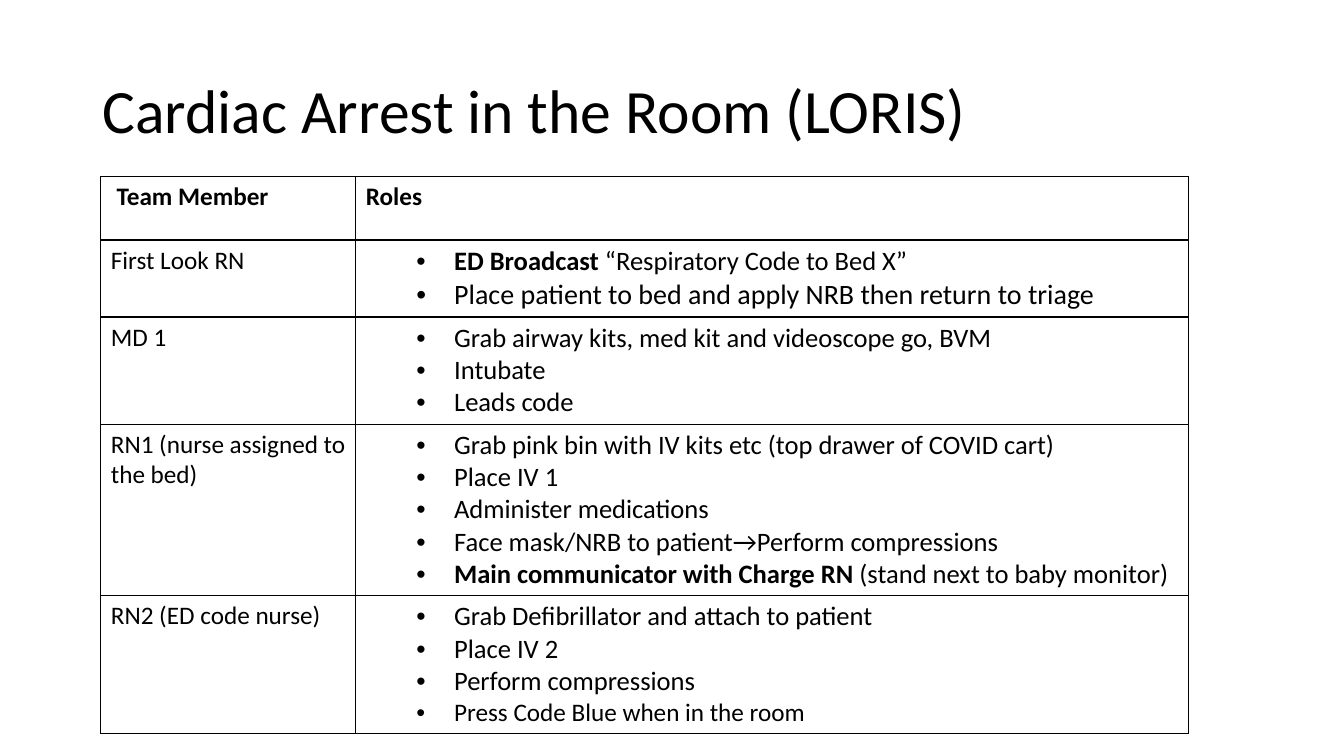
from lxml import etree
from pptx import Presentation
from pptx.dml.color import RGBColor
from pptx.enum.text import MSO_ANCHOR, PP_ALIGN
from pptx.oxml.ns import qn
from pptx.util import Pt

MIDDLE = MSO_ANCHOR.MIDDLE
LEFT = PP_ALIGN.LEFT
TITLE_ONLY = 5

FONT = "Calibri"
BLACK = "000000"
COLUMN_WIDTHS = (182.2, 594.7)
ROW_HEIGHTS = (45.5, 55, 76.5, 122, 98.5)

# Each role is (bold lead, plain text, size).
TEAM = [
    ("First Look RN", [
        ("ED Broadcast", " “Respiratory Code to Bed X”", 19),
        ("", "Place patient to bed and apply NRB then return to triage", 20),
    ]),
    ("MD 1", [
        ("", "Grab airway kits, med kit and videoscope go, BVM", 19),
        ("", "Intubate", 19),
        ("", "Leads code", 19),
    ]),
    ("RN1 (nurse assigned to the bed)", [
        ("", "Grab pink bin with IV kits etc (top drawer of COVID cart)", 19),
        ("", "Place IV 1", 19),
        ("", "Administer medications", 19),
        ("", "Face mask/NRB to patient→Perform compressions", 19),
        ("Main communicator with Charge RN ", "(stand next to baby monitor)", 19),
    ]),
    ("RN2 (ED code nurse)", [
        ("", "Grab Defibrillator and attach to patient", 19),
        ("", "Place IV 2", 19),
        ("", "Perform compressions", 19),
        ("", "Press Code Blue when in the room", 18),
    ]),
]


def rgb(color):
    return RGBColor.from_string(color)


def add_run(p, text, size, bold=False):
    r = p.add_run()
    r.text = text
    r.font.name = FONT
    r.font.size = Pt(size)
    r.font.bold = bold
    r.font.color.rgb = rgb(BLACK)


def add_bullet(p):
    pPr = p._p.get_or_add_pPr()
    pPr.set("marL", str(Pt(63)))
    pPr.set("indent", str(Pt(-27)))
    etree.SubElement(pPr, qn("a:buFont"), typeface="Arial")
    etree.SubElement(pPr, qn("a:buChar"), char="•")


def add_title(slide, text):
    sp = slide.shapes.title
    sp.left, sp.top, sp.width, sp.height = Pt(66), Pt(28.75), Pt(828), Pt(104.4)
    tf = sp.text_frame
    tf.word_wrap = True
    tf.vertical_anchor = MIDDLE
    p = tf.paragraphs[0]
    p.alignment = LEFT
    p.line_spacing = 0.9
    add_run(p, text, 44)


def frame_cell(cell):
    """Give the cell black borders and no fill."""
    tcPr = cell._tc.get_or_add_tcPr()
    for side in ("lnL", "lnR", "lnT", "lnB"):
        ln = etree.SubElement(tcPr, qn(f"a:{side}"), w=str(Pt(1)))
        fill = etree.SubElement(ln, qn("a:solidFill"))
        etree.SubElement(fill, qn("a:srgbClr"), val=BLACK)
    cell.fill.background()


def write_label(cell, text, bold=False):
    add_run(cell.text_frame.paragraphs[0], text, 18, bold)


def write_roles(cell, roles):
    tf = cell.text_frame
    for i, (lead, text, size) in enumerate(roles):
        p = tf.add_paragraph() if i else tf.paragraphs[0]
        add_bullet(p)
        if lead:
            add_run(p, lead, size, bold=True)
        add_run(p, text, size)


def add_team_table(slide):
    table = slide.shapes.add_table(
        len(ROW_HEIGHTS), len(COLUMN_WIDTHS), Pt(72), Pt(126),
        Pt(sum(COLUMN_WIDTHS)), Pt(sum(ROW_HEIGHTS))).table
    table.first_row = table.horz_banding = False
    for column, width in zip(table.columns, COLUMN_WIDTHS):
        column.width = Pt(width)
    for row, height in zip(table.rows, ROW_HEIGHTS):
        row.height = Pt(height)
    for cell in table.iter_cells():
        frame_cell(cell)
    write_label(table.cell(0, 0), " Team Member", bold=True)
    write_label(table.cell(0, 1), "Roles", bold=True)
    for i, (member, roles) in enumerate(TEAM, start=1):
        write_label(table.cell(i, 0), member)
        write_roles(table.cell(i, 1), roles)


def main():
    prs = Presentation()
    prs.slide_width, prs.slide_height = Pt(960), Pt(540)
    slide = prs.slides.add_slide(prs.slide_layouts[TITLE_ONLY])
    add_title(slide, "Cardiac Arrest in the Room (LORIS)")
    add_team_table(slide)
    prs.save("out.pptx")


if __name__ == "__main__":
    main()
